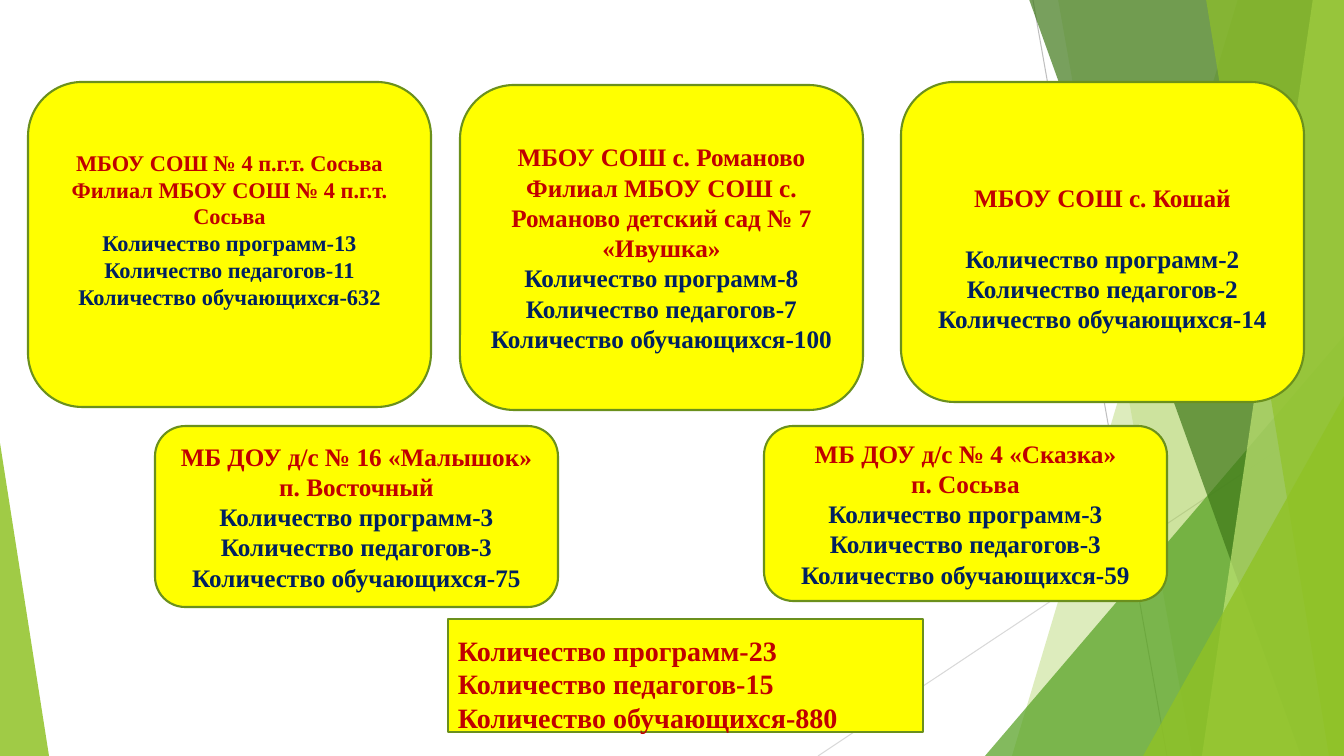
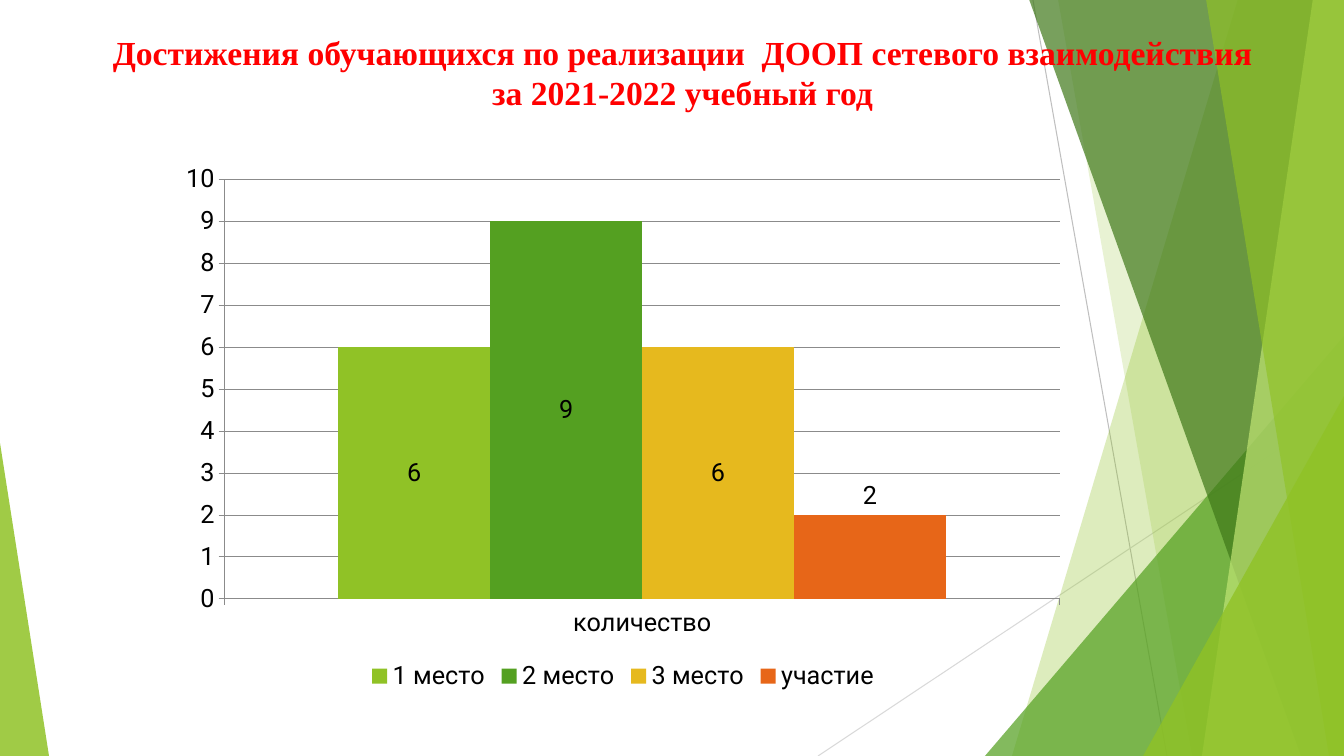
from lxml.etree import SubElement
from pptx import Presentation
from pptx.chart.data import CategoryChartData
from pptx.dml.color import RGBColor
from pptx.enum.chart import XL_CHART_TYPE as ChartType
from pptx.enum.chart import XL_LABEL_POSITION as LabelPosition
from pptx.enum.chart import XL_LEGEND_POSITION as LegendPosition
from pptx.enum.chart import XL_TICK_MARK as TickMark
from pptx.enum.shapes import MSO_CONNECTOR as Connector
from pptx.enum.shapes import MSO_SHAPE as Preset
from pptx.enum.text import MSO_ANCHOR as Anchor
from pptx.enum.text import MSO_AUTO_SIZE as AutoSize
from pptx.enum.text import PP_ALIGN as Align
from pptx.oxml.ns import qn
from pptx.util import Emu, Pt

WIDTH, HEIGHT = 1344, 756
EMU_PER_PX = 12192000 / WIDTH

LIME = RGBColor(0x90, 0xC2, 0x26)
GREEN = RGBColor(0x54, 0xA0, 0x21)
DARK_GREEN = RGBColor(0x3F, 0x78, 0x19)
PALE_LIME = RGBColor(0xC0, 0xE4, 0x74)
OLIVE = RGBColor(0x6B, 0x90, 0x1C)
YELLOW = RGBColor(0xFF, 0xFF, 0x00)
GOLD = RGBColor(0xE6, 0xB9, 0x1E)
ORANGE = RGBColor(0xE7, 0x66, 0x18)
RED = RGBColor(0xFF, 0x00, 0x00)
DARK_RED = RGBColor(0xC0, 0x00, 0x00)
NAVY = RGBColor(0x00, 0x20, 0x60)
BLACK = RGBColor(0x00, 0x00, 0x00)
SILVER = RGBColor(0xBF, 0xBF, 0xBF)
LIGHT_GRAY = RGBColor(0xD9, 0xD9, 0xD9)
AXIS_GRAY = RGBColor(0x8B, 0x8B, 0x8B)

TEXT_FONT = "Times New Roman"
CHART_FONT = "Roboto"
TITLE_ONLY, BLANK = 5, 6


def px(*lengths):
    return [Emu(round(length * EMU_PER_PX)) for length in lengths]


def apply(target, values):
    for name, value in values.items():
        setattr(target, name, value)


def counts(programs, teachers, pupils):
    return [f"Количество программ-{programs}",
            f"Количество педагогов-{teachers}",
            f"Количество обучающихся-{pupils}"]


class Deck:
    def __init__(self):
        self.deck = Presentation()
        self.deck.slide_width, self.deck.slide_height = px(WIDTH, HEIGHT)
        self.page = None

    def add_page(self, layout):
        self.page = self.deck.slides.add_slide(self.deck.slide_layouts[layout])

    def move_to_master(self):
        """Move everything on the current page to the master, with fresh ids."""
        tree = self.deck.slide_master.shapes.element
        for shape in list(self.page.shapes):
            tree.append(shape.element)
        for number, node in enumerate(tree.iter(qn("p:cNvPr")), 1):
            node.set("id", str(number))

    def paint(self, shape, color, opacity):
        shape.shadow.inherit = False
        shape.fill.solid()
        shape.fill.fore_color.rgb = color
        shape.line.fill.background()
        tint = shape.element.spPr.find(".//" + qn("a:srgbClr"))
        SubElement(tint, qn("a:alpha"), val=str(opacity * 1000))

    def ray(self, ends, color):
        line = self.page.shapes.add_connector(Connector.STRAIGHT, *px(*ends))
        line.line.color.rgb = color
        line.line.width = Pt(0.75)
        SubElement(line.element.spPr, qn("a:effectLst"))

    def band(self, top, bottom, color, opacity):
        """Fill from a slanted left edge to the right side of the page."""
        corners = [(top, -1), (WIDTH, -1), (WIDTH, HEIGHT), (bottom, HEIGHT)]
        start, *rest = [px(*corner) for corner in corners]
        builder = self.page.shapes.build_freeform(*start, scale=1.0)
        builder.add_line_segments(rest, close=True)
        self.paint(builder.convert_to_shape(), color, opacity)

    def wedge(self, left, top, width, apex, color, opacity):
        """Triangle standing on the bottom edge; apex is 0 (left) to 1 (right)."""
        shape = self.page.shapes.add_shape(
            Preset.ISOSCELES_TRIANGLE, *px(left, top, width, HEIGHT - top))
        shape.adjustments[0] = apex
        self.paint(shape, color, opacity)

    def fill_text(self, frame, lines, size, align, gap=0):
        """Set (text, color) lines; gap is the space above the second."""
        for index, (text, color) in enumerate(lines):
            para = frame.paragraphs[0] if index == 0 else frame.add_paragraph()
            apply(para, {"alignment": align,
                         "space_before": Pt(gap if index == 1 else 0)})
            span = para.add_run()
            span.text = text
            apply(span.font, {"name": TEXT_FONT, "size": Pt(size), "bold": True})
            span.font.color.rgb = color

    def card(self, preset, area, lines, size=18, align=Align.CENTER,
             anchor=Anchor.MIDDLE, above=0, below=0, gap=0):
        box = self.page.shapes.add_shape(preset, *px(*area))
        box.shadow.inherit = False
        box.fill.solid()
        box.fill.fore_color.rgb = YELLOW
        box.line.color.rgb = OLIVE
        box.line.width = Pt(1.5)
        top, bottom = px(above, below)
        apply(box.text_frame, {"word_wrap": True, "vertical_anchor": anchor,
                               "margin_top": top, "margin_bottom": bottom})
        self.fill_text(box.text_frame, lines, size, align, gap)

    def title(self, area, lines):
        box = self.page.shapes.title
        apply(box, dict(zip(("left", "top", "width", "height"), px(*area))))
        apply(box.text_frame, {"word_wrap": True, "auto_size": AutoSize.NONE,
                               "vertical_anchor": Anchor.TOP})
        self.fill_text(box.text_frame, [(line, RED) for line in lines],
                       24, Align.CENTER)

    def column_chart(self, area, category, columns):
        """Draw one series for each (name, value, color, label position)."""
        data = CategoryChartData()
        data.categories = [category]
        for name, value, *_ in columns:
            data.add_series(name, [value])
        chart = self.page.shapes.add_chart(
            ChartType.COLUMN_CLUSTERED, *px(*area), data).chart
        apply(chart, {"has_title": False, "has_legend": True})
        apply(chart.font, {"name": CHART_FONT, "size": Pt(18)})
        chart.font.color.rgb = BLACK
        apply(chart.legend, {"position": LegendPosition.BOTTOM,
                             "include_in_layout": False})
        apply(chart.value_axis, {"minimum_scale": 0, "maximum_scale": 10,
                                 "major_unit": 1, "has_major_gridlines": True})
        for axis in (chart.category_axis, chart.value_axis):
            axis.major_tick_mark = TickMark.OUTSIDE
            axis.format.line.color.rgb = AXIS_GRAY
        chart.value_axis.major_gridlines.format.line.color.rgb = AXIS_GRAY
        plot = chart.plots[0]
        apply(plot, {"gap_width": 150, "overlap": 0, "vary_by_categories": False})
        for series, (_, _, color, position) in zip(plot.series, columns):
            series.format.fill.solid()
            series.format.fill.fore_color.rgb = color
            apply(series.data_labels, {"show_value": True, "position": position})


def draw_backdrop(deck):
    deck.ray((1033, 0, 1167, HEIGHT), SILVER)
    deck.ray((WIDTH, 406, 818, HEIGHT), LIGHT_GRAY)
    deck.band(1238, 1012, LIME, 30)
    deck.band(1058, 1192, LIME, 20)
    deck.wedge(985, 336, 359, 1, GREEN, 72)
    deck.band(1029, 1301, DARK_GREEN, 70)
    deck.band(1313, 1202, PALE_LIME, 70)
    deck.band(1206, 1329, LIME, 65)
    deck.wedge(1143, 396, 201, 1, LIME, 80)
    deck.wedge(0, 443, 49, 0, LIME, 85)
    deck.move_to_master()


def draw_schools(deck):
    schools = [
        ((28, 82, 403, 325),
         ["МБОУ СОШ № 4 п.г.т. Сосьва", "Филиал МБОУ СОШ № 4 п.г.т. Сосьва"],
         (13, 11, 632), {"size": 16, "below": 30}),
        ((460, 85, 403, 325),
         ["МБОУ СОШ с. Романово",
          "Филиал МБОУ СОШ с. Романово детский сад № 7 «Ивушка»"],
         (8, 7, 100), {}),
        ((901, 82, 403, 320), ["МБОУ СОШ с. Кошай"],
         (2, 2, 14), {"above": 32, "gap": 22}),
        ((155, 426, 403, 181), ["МБ ДОУ д/с № 16 «Малышок» п. Восточный"],
         (3, 3, 75), {}),
        ((764, 426, 403, 175), ["МБ ДОУ д/с № 4 «Сказка»", "п. Сосьва"],
         (3, 3, 59), {}),
    ]
    deck.card(Preset.RECTANGLE, (448, 619, 475, 113),
              [(line, DARK_RED) for line in counts(23, 15, 880)],
              size=20, align=Align.LEFT, anchor=Anchor.TOP, above=14)
    for area, names, numbers, style in schools:
        lines = [(name, DARK_RED) for name in names]
        lines += [(line, NAVY) for line in counts(*numbers)]
        deck.card(Preset.ROUNDED_RECTANGLE, area, lines, **style)


def draw_achievements(deck):
    deck.title((66, 27, 1233, 92),
               ["Достижения обучающихся по реализации  ДООП сетевого взаимодействия",
                "за 2021-2022 учебный год"])
    deck.column_chart((168, 154, 910, 542), "количество", [
        ("1 место", 6, LIME, LabelPosition.CENTER),
        ("2 место", 9, GREEN, LabelPosition.CENTER),
        ("3 место", 6, GOLD, LabelPosition.CENTER),
        ("участие", 2, ORANGE, LabelPosition.OUTSIDE_END),
    ])


def main():
    deck = Deck()
    deck.add_page(BLANK)
    draw_backdrop(deck)
    draw_schools(deck)
    deck.add_page(TITLE_ONLY)
    draw_achievements(deck)
    deck.deck.save("out.pptx")


if __name__ == "__main__":
    main()
